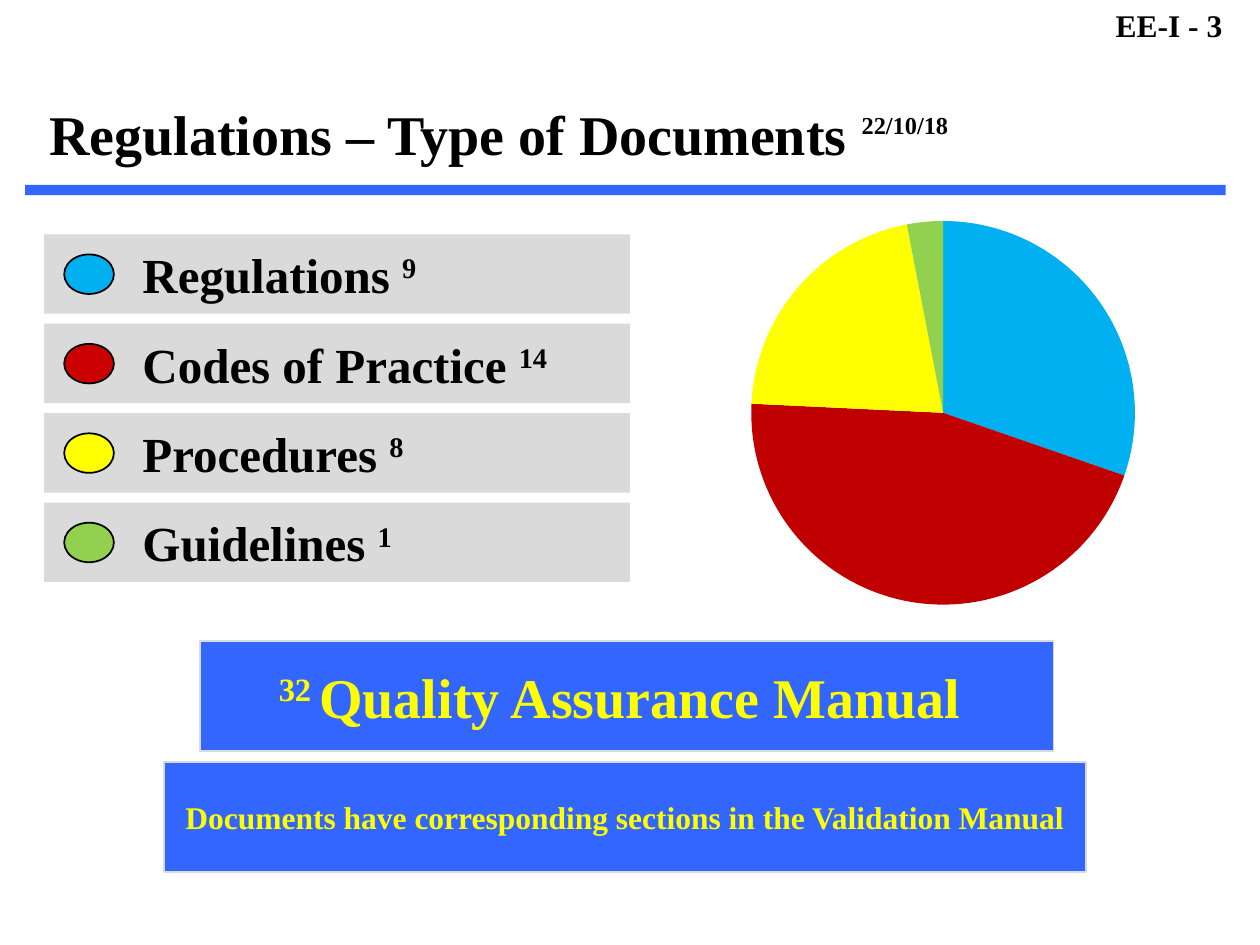
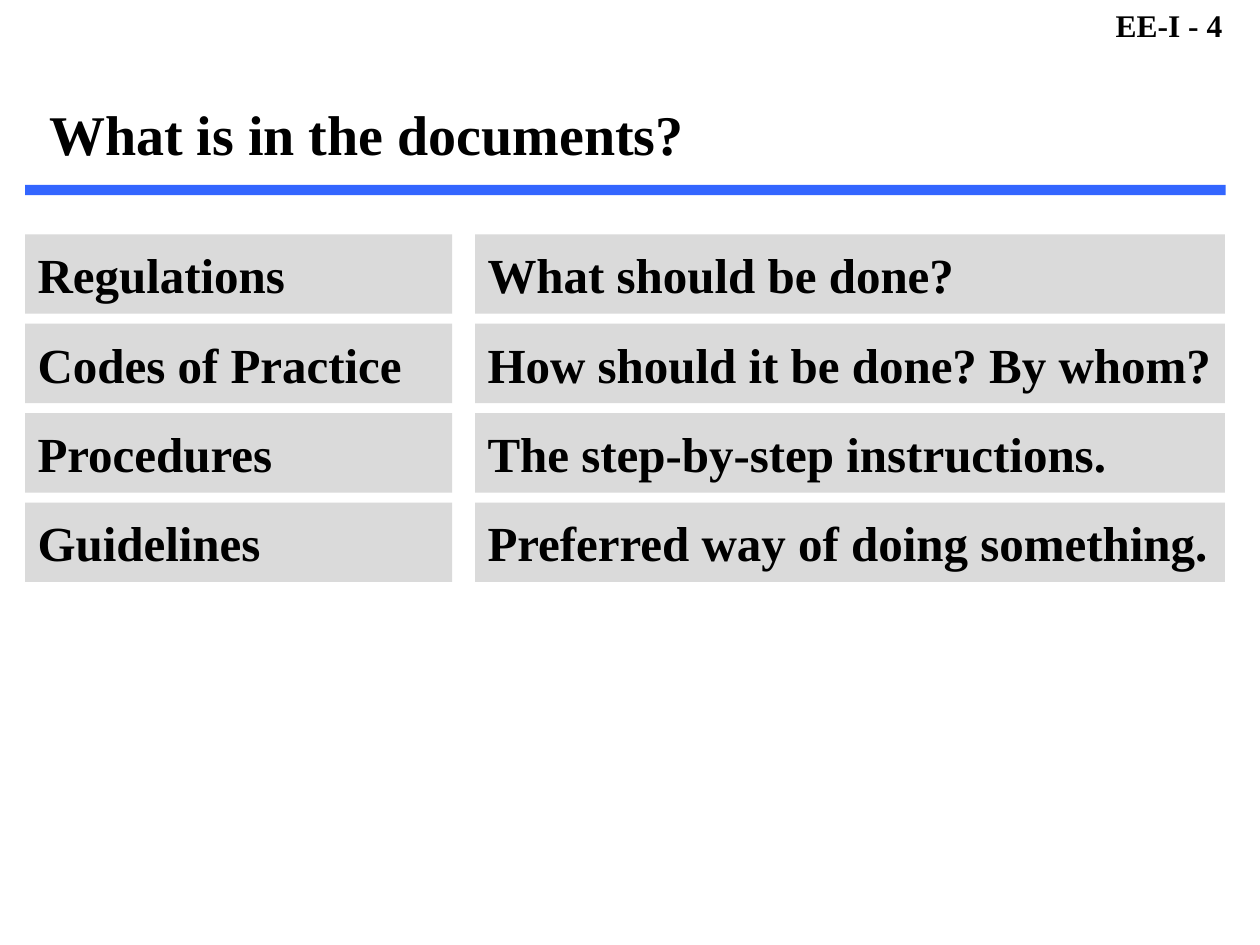
from lxml import etree
from pptx import Presentation
from pptx.chart.data import CategoryChartData
from pptx.dml.color import RGBColor
from pptx.enum.chart import XL_CHART_TYPE
from pptx.enum.shapes import MSO_SHAPE
from pptx.enum.text import MSO_ANCHOR, PP_ALIGN
from pptx.oxml.ns import qn
from pptx.util import Pt

RECT, OVAL = MSO_SHAPE.RECTANGLE, MSO_SHAPE.OVAL
LEFT, CENTER, RIGHT = PP_ALIGN.LEFT, PP_ALIGN.CENTER, PP_ALIGN.RIGHT
TOP, MIDDLE, BOTTOM = MSO_ANCHOR.TOP, MSO_ANCHOR.MIDDLE, MSO_ANCHOR.BOTTOM
PIE = XL_CHART_TYPE.PIE

FONT = "Times New Roman"
BLACK, WHITE, BLUE, GREY, YELLOW = "000000", "FFFFFF", "3366FF", "DADADA", "FFFF00"
ROWS_TOP, ROW_PITCH, ROW_HEIGHT = 133.9, 51.1, 45.4

DOCUMENT_TYPES = [
    ("Regulations", "9", 30, "00B0F0", "00B0F0", "What should be done?"),
    ("Codes of Practice", "14", 45, "CC0000", "C00000", "How should it be done? By whom?"),
    ("Procedures", "8", 21, YELLOW, YELLOW, "The step-by-step instructions."),
    ("Guidelines", "1", 3, "92D050", "92D050", "Preferred way of doing something."),
]


def color(value):
    return RGBColor.from_string(value)


def write(frame, runs, size, ink=BLACK, align=LEFT, anchor=MIDDLE, wrap=False):
    frame.word_wrap = wrap
    frame.vertical_anchor = anchor
    paragraph = frame.paragraphs[0]
    paragraph.alignment = align
    font = paragraph.font
    font.name, font.size, font.bold = FONT, Pt(size), True
    font.color.rgb = color(ink)
    for text, raised in runs:
        run = paragraph.add_run()
        run.text = text
        if raised:
            run.font._element.set("baseline", str(raised * 1000))
    return paragraph


def add_block(slide, kind, box, fill, outline=None):
    block = slide.shapes.add_shape(kind, *map(Pt, box))
    block.shadow.inherit = False
    block.fill.solid()
    block.fill.fore_color.rgb = color(fill)
    if outline:
        block.line.color.rgb = color(outline)
        block.line.width = Pt(1)
    else:
        block.line.fill.background()
    return block


def add_frame(slide, number, title, date=None):
    slide.background.fill.solid()
    slide.background.fill.fore_color.rgb = color(WHITE)
    page = slide.shapes.add_textbox(Pt(496), Pt(0), Pt(209.6), Pt(29))
    write(page.text_frame, [(f"EE-I - {number}", 0)], 18, align=RIGHT, anchor=TOP, wrap=True)
    add_block(slide, RECT, (14.4, 105.7, 686, 5.8), BLUE)
    heading = slide.shapes.add_textbox(Pt(21), Pt(26), Pt(673), Pt(73.4))
    runs = [(f"{title} ", 0), (date, 50)] if date else [(title, 0)]
    paragraph = write(heading.text_frame, runs, 32, anchor=BOTTOM, wrap=True)
    paragraph.line_spacing = 0.9
    if date:
        paragraph.runs[-1].font.size = Pt(24)


def add_rows(slide, left, width, rows, indent=0):
    for index, runs in enumerate(rows):
        box = (left, ROWS_TOP + index * ROW_PITCH, width, ROW_HEIGHT)
        frame = add_block(slide, RECT, box, GREY).text_frame
        frame.margin_left = Pt(7.2 + indent)
        write(frame, runs, 28)


def add_legend(slide, left, width):
    rows = [[(f"{name} ", 0), (count, 30)] for name, count, *_ in DOCUMENT_TYPES]
    add_rows(slide, left, width, rows, indent=49)
    for index, (_, _, _, marker, _, _) in enumerate(DOCUMENT_TYPES):
        box = (left + 11.5, ROWS_TOP + 11.5 + index * ROW_PITCH, 28.4, 22.6)
        add_block(slide, OVAL, box, marker, BLACK)


def add_share_pie(slide, box):
    data = CategoryChartData()
    data.categories = [str(n) for n in range(1, len(DOCUMENT_TYPES) + 1)]
    data.add_series("Series 1", [share for _, _, share, *_ in DOCUMENT_TYPES])
    chart = slide.shapes.add_chart(PIE, *map(Pt, box), data).chart
    chart.has_legend = False
    chart.has_title = False
    chart.font.name, chart.font.size = FONT, Pt(18)
    chart.font.color.rgb = color(BLACK)
    plot = chart.plots[0]
    plot.vary_by_categories = True
    for index, (_, _, _, _, wedge, _) in enumerate(DOCUMENT_TYPES):
        look = plot.series[0].points[index].format
        look.fill.solid()
        look.fill.fore_color.rgb = color(wedge)
        look.line.fill.background()

    area = chart._chartSpace.find(".//" + qn("c:plotArea"))
    layout = area.find(qn("c:layout"))
    if layout is None:
        layout = etree.Element(qn("c:layout"))
        area.insert(0, layout)
    manual = etree.SubElement(layout, qn("c:manualLayout"))
    for tag, value in (("layoutTarget", "inner"), ("xMode", "edge"), ("yMode", "edge"),
                       ("x", "0.16"), ("y", "0.04"), ("w", "0.68"), ("h", "0.92")):
        etree.SubElement(manual, qn(f"c:{tag}")).set("val", value)


def add_banner(slide, box, runs, size):
    banner = add_block(slide, RECT, box, BLUE, GREY)
    write(banner.text_frame, runs, size, YELLOW, CENTER)


def build_types_slide(slide):
    add_frame(slide, 3, "Regulations – Type of Documents", "22/10/18")
    add_legend(slide, 25.2, 334.8)
    add_share_pie(slide, (377.3, 116.8, 323.3, 238.3))
    add_banner(slide, (114.5, 366.5, 487.5, 62.6),
               [("32 ", 30), ("Quality Assurance Manual ", 0)], 32)
    add_banner(slide, (93.6, 435.6, 527, 62.6),
               [("Documents have corresponding sections in the Validation Manual", 0)], 18)


def build_contents_slide(slide):
    add_frame(slide, 4, "What is in the documents?")
    add_rows(slide, 14.4, 244, [[(entry[0], 0)] for entry in DOCUMENT_TYPES])
    add_rows(slide, 271.5, 428.5, [[(entry[-1], 0)] for entry in DOCUMENT_TYPES])


def main():
    deck = Presentation()
    deck.slide_width, deck.slide_height = Pt(720), Pt(540)
    for build in (build_types_slide, build_contents_slide):
        build(deck.slides.add_slide(deck.slide_layouts[6]))
    deck.save("out.pptx")


if __name__ == "__main__":
    main()
